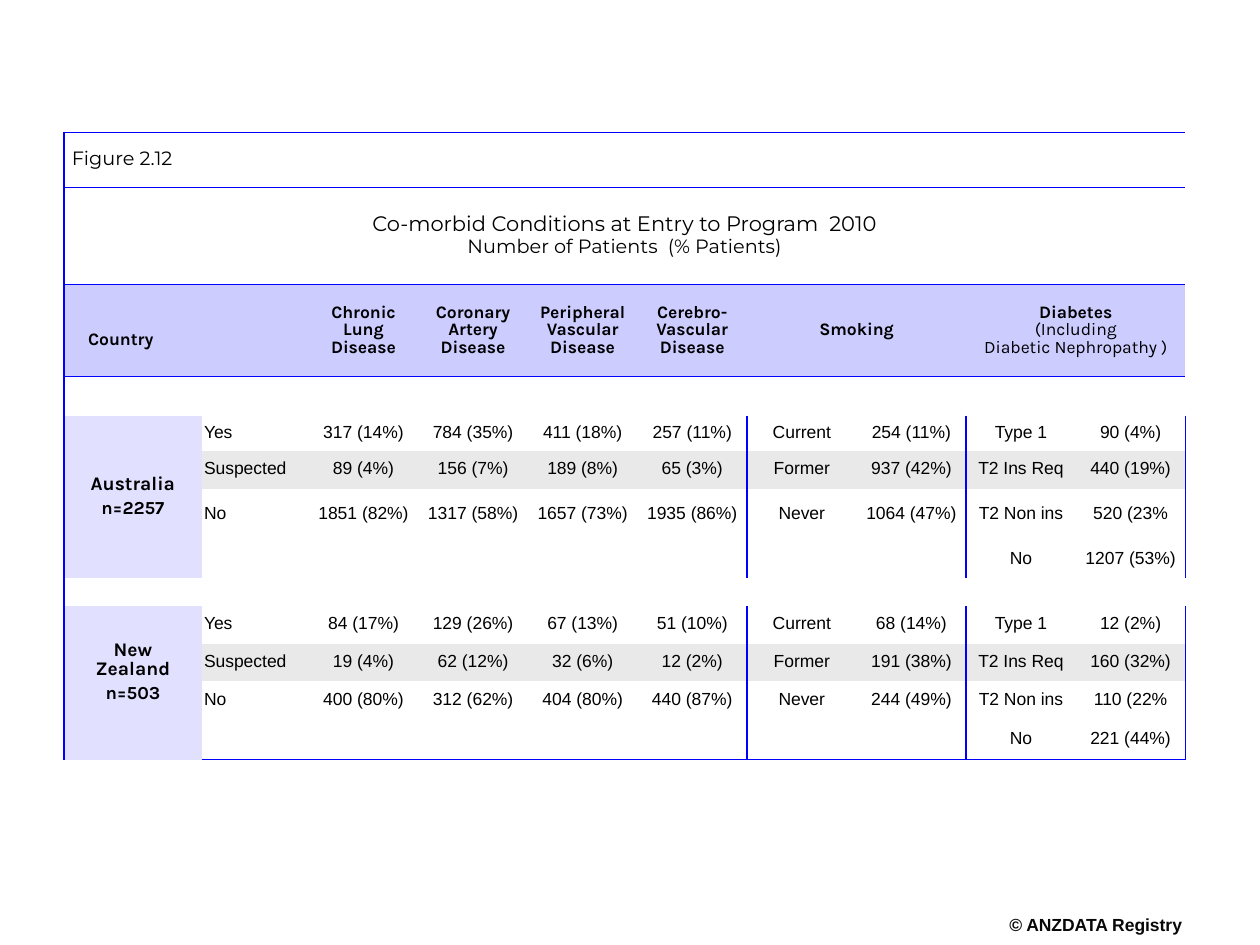
import dataclasses

import pptx
import pptx.dml.color
import pptx.enum.text
import pptx.oxml
import pptx.oxml.ns
import pptx.util
from lxml import etree

Inches = pptx.util.Inches
PP_ALIGN = pptx.enum.text.PP_ALIGN
MIDDLE = pptx.enum.text.MSO_ANCHOR.MIDDLE


@dataclasses.dataclass(frozen=True)
class Type:
    font: str
    size: float
    bold: bool = False
    before: float = 0


@dataclasses.dataclass(frozen=True)
class Theme:
    text: str = "000000"
    footer: str = "080808"
    line: str = "0000FF"
    header: str = "CCCCFF"
    country: str = "E1E1FF"
    band: str = "E9E9E9"
    figure: Type = Type("Montserrat", 11)
    title: Type = Type("Montserrat", 12)
    subtitle: Type = Type("Montserrat", 11, before=1)
    heading: Type = Type("Karla", 10, True)
    detail: Type = Type("Karla", 10)
    name: Type = Type("Karla", 11, True)
    count: Type = Type("Karla", 10.5, True, 3)
    body: Type = Type("Arial", 10)
    credit: Type = Type("Arial", 10, True)
    spacing: float = 0.85
    no_grid: str = "{2D5ABB26-0587-4C30-8999-92F81FD0307C}"


COLUMNS = [1.09, 0.85] + [0.87] * 8
ROWS = [0.44, 0.77, 0.73, 0.31, 0.28, 0.3, 0.41, 0.3, 0.22, 0.3, 0.3, 0.3, 0.32]
RULED_ROWS = {0, 1, 2, 3, len(ROWS)}
RULED_COLUMNS = {6, 8}
DISEASES = ["Chronic|Lung|Disease", "Coronary|Artery|Disease",
            "Peripheral|Vascular|Disease", "Cerebro-|Vascular|Disease", "Smoking"]
ANSWERS = ["Yes", "Suspected", "No", ""]
SMOKING = ["Current", "Former", "Never", ""]
DIABETES = ["Type 1", "T2 Ins Req", "T2 Non ins", "No"]
COUNTRIES = [
    (4, ["Australia"], "n=2257", 0.01, [
        ["317 (14%)", "784 (35%)", "411 (18%)", "257 (11%)", "254 (11%)", "90 (4%)"],
        ["89 (4%)", "156 (7%)", "189 (8%)", "65 (3%)", "937 (42%)", "440 (19%)"],
        ["1851 (82%)", "1317 (58%)", "1657 (73%)", "1935 (86%)", "1064 (47%)", "520 (23%"],
        ["", "", "", "", "", "1207 (53%)"]]),
    (9, ["New", "Zealand"], "n=503", 0.18, [
        ["84 (17%)", "129 (26%)", "67 (13%)", "51 (10%)", "68 (14%)", "12 (2%)"],
        ["19 (4%)", "62 (12%)", "32 (6%)", "12 (2%)", "191 (38%)", "160 (32%)"],
        ["400 (80%)", "312 (62%)", "404 (80%)", "440 (87%)", "244 (49%)", "110 (22%"],
        ["", "", "", "", "", "221 (44%)"]]),
]


class Deck:
    """Holds the theme and the current slide, and adds its elements."""

    def __init__(self, prs, theme):
        self.theme = theme
        self.s = prs.slides.add_slide(prs.slide_layouts[6])

    def paragraphs(self, tf, lines, align=PP_ALIGN.CENTER, color=None):
        for i, (text, style) in enumerate(lines):
            p = tf.paragraphs[0] if i == 0 else tf.add_paragraph()
            p.alignment = align
            p.line_spacing = self.theme.spacing
            if i and style.before:
                p.space_before = pptx.util.Pt(style.before)
            p.add_run().text = text
            p.font.name = style.font
            p.font.size = pptx.util.Pt(style.size)
            p.font.bold = style.bold
            p.font.color.rgb = pptx.dml.color.RGBColor.from_string(color or self.theme.text)

    def text(self, x, y, w, h, text, style, color):
        tf = self.s.shapes.add_textbox(Inches(x), Inches(y), Inches(w), Inches(h)).text_frame
        tf.margin_left = tf.margin_right = tf.margin_top = tf.margin_bottom = 0
        tf.word_wrap = False
        self.paragraphs(tf, [(text, style)], color=color)

    def border(self, cell, sides):
        qn = pptx.oxml.ns.qn
        tcPr = cell._tc.get_or_add_tcPr()
        for side in "LRTB":
            ln = etree.SubElement(tcPr, qn(f"a:ln{side}"), w="12700")
            if side in sides:
                fill = etree.SubElement(ln, qn("a:solidFill"))
                etree.SubElement(fill, qn("a:srgbClr"), val=self.theme.line)
            else:
                etree.SubElement(ln, qn("a:noFill"))

    def table(self, x, y, columns, rows):
        frame = self.s.shapes.add_table(len(rows), len(columns), Inches(x), Inches(y),
                                        Inches(sum(columns)), Inches(sum(rows)))
        table = frame.table
        table.first_row = table.horz_banding = False
        table._tbl.tblPr.find(pptx.oxml.ns.qn("a:tableStyleId")).text = self.theme.no_grid
        for column, width in zip(table.columns, columns):
            column.width = Inches(width)
        for row, height in zip(table.rows, rows):
            row.height = Inches(height)
        for r in range(len(rows)):
            in_data = r >= 4 and r != 8
            for c in range(len(columns)):
                sides = {"L": c == 0 or in_data and c in RULED_COLUMNS,
                         "R": c + 1 == len(columns) or in_data and c + 1 in RULED_COLUMNS,
                         "T": r in RULED_ROWS, "B": r + 1 in RULED_ROWS}
                cell = table.cell(r, c)
                self.border(cell, [side for side, ruled in sides.items() if ruled])
                cell.fill.background()
                cell.vertical_anchor = MIDDLE
                cell.margin_left = cell.margin_right = Inches(0.02)
                cell.margin_top = cell.margin_bottom = Inches(0.01)
        return table

    def cell(self, table, r, c, lines=(), fill=None, span=(1, 1), align=PP_ALIGN.CENTER):
        cell = table.cell(r, c)
        if span != (1, 1):
            cell.merge(table.cell(r + span[0] - 1, c + span[1] - 1))
        if fill:
            cell.fill.solid()
            cell.fill.fore_color.rgb = pptx.dml.color.RGBColor.from_string(fill)
        lines = [line for line in lines if line[0]]
        if lines:
            self.paragraphs(cell.text_frame, lines, align)
        else:
            etree.SubElement(cell.text_frame.paragraphs[0]._p,
                             pptx.oxml.ns.qn("a:endParaRPr"), sz="1000")
        return cell


def add_headings(deck, table):
    t = deck.theme
    figure = deck.cell(table, 0, 0, [("Figure 2.12", t.figure)], span=(1, 10), align=PP_ALIGN.LEFT)
    figure.margin_left = Inches(0.06)
    deck.cell(table, 1, 0, [("Co-morbid Conditions at Entry to Program  2010", t.title),
                            ("Number of Patients  (% Patients)", t.subtitle)], span=(1, 10))
    country = deck.cell(table, 2, 0, [("Country", t.heading)], t.header, (1, 2), PP_ALIGN.LEFT)
    country.margin_left = Inches(0.19)
    country.margin_top = Inches(0.17)
    for c, disease in enumerate(DISEASES, 2):
        lines = [(line, t.heading) for line in disease.split("|")]
        deck.cell(table, 2, c, lines, t.header, (1, 2 if c == 6 else 1))
    deck.cell(table, 2, 8, [("Diabetes", t.heading), ("(Including", t.detail),
                            ("Diabetic Nephropathy )", t.detail)], t.header, (1, 2))
    for r in (3, 8):
        deck.cell(table, r, 0, span=(1, 10))


def add_country(deck, table, top, names, count, bottom_margin, values):
    t = deck.theme
    lines = [(name, t.name) for name in names] + [(count, t.count)]
    country = deck.cell(table, top, 0, lines, t.country, (4, 1))
    country.margin_bottom = Inches(bottom_margin)
    for i, (answer, smoking, diabetes, v) in enumerate(zip(ANSWERS, SMOKING, DIABETES, values)):
        row = [answer, *v[:4], smoking, v[4], diabetes, v[5]]
        for c, text in enumerate(row, 1):
            deck.cell(table, top + i, c, [(text, t.body)], t.band if i == 1 else None,
                      align=PP_ALIGN.LEFT if c == 1 else PP_ALIGN.CENTER)


def main():
    prs = pptx.Presentation()
    prs.slide_width, prs.slide_height = Inches(10), Inches(7.5)
    deck = Deck(prs, Theme())
    deck.text(7.99, 7.28, 1.41, 0.17, "© ANZDATA Registry", deck.theme.credit, deck.theme.footer)
    table = deck.table(0.51, 1.05, COLUMNS, ROWS)
    add_headings(deck, table)
    for country in COUNTRIES:
        add_country(deck, table, *country)
    prs.save("out.pptx")


if __name__ == "__main__":
    main()
